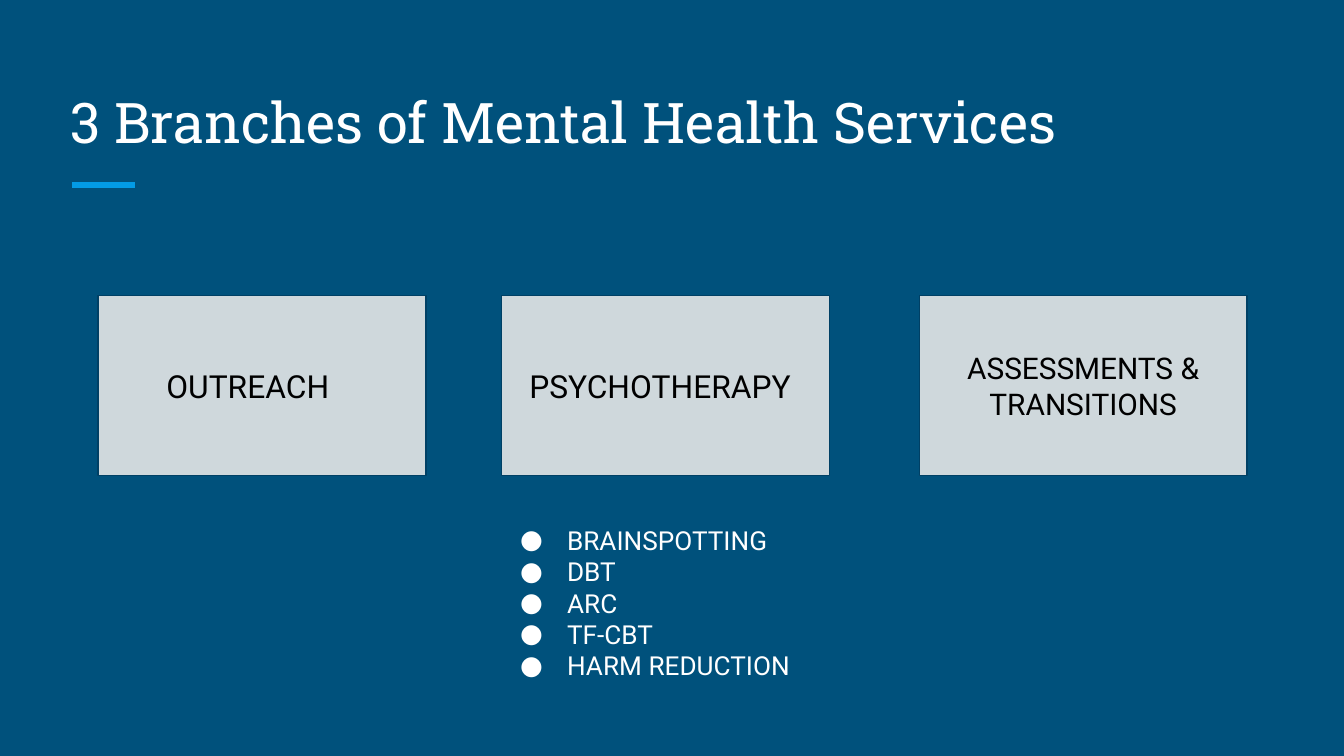
from dataclasses import dataclass

from lxml.etree import SubElement
from pptx import Presentation
from pptx.dml.color import RGBColor
from pptx.enum.shapes import MSO_CONNECTOR as Link, MSO_SHAPE as Kind
from pptx.enum.text import MSO_ANCHOR as Anchor, MSO_AUTO_SIZE as Fit, PP_ALIGN as Align
from pptx.oxml.ns import qn
from pptx.util import Pt

WHITE, BLACK = "FFFFFF", "000000"
NAVY, EDGE, GREY, SKY = "00517C", "004065", "CFD8DC", "039BE5"
SANS, SLAB = "Roboto", "Roboto Slab"
TOP, WIDE, HIGH = 158.4, 175.7, 96.5


@dataclass
class Branch:
    name: str
    left: float
    label: tuple[float, float, float, float]
    size: float
    align: Align = Align.LEFT


BRANCHES = [
    Branch("OUTREACH", 52.5, (82, 189.4, 116.6, 35.3), 17),
    Branch("PSYCHOTHERAPY", 268.8, (276.5, 189.4, 167.8, 35.3), 17),
    Branch("ASSESSMENTS & TRANSITIONS", 492.5, (509, 180, 142.6, 53.3), 16, Align.CENTER),
]
METHODS = ["BRAINSPOTTING", "DBT", "ARC", "TF-CBT", "HARM REDUCTION"]


def paint(target, tone: str) -> None:
    """Give a fill a solid colour."""
    target.solid()
    target.fore_color.rgb = RGBColor.from_string(tone)


def place(shape, left: float, top: float, width: float, height: float) -> None:
    shape.left, shape.top = Pt(left), Pt(top)
    shape.width, shape.height = Pt(width), Pt(height)


def setup(frame, anchor: Anchor = Anchor.TOP) -> None:
    """Set wrapping, anchor and even insets of a text frame."""
    frame.word_wrap = True
    frame.auto_size = Fit.NONE
    frame.vertical_anchor = anchor
    frame.margin_left = frame.margin_right = Pt(7.2)
    frame.margin_top = frame.margin_bottom = Pt(7.2)


def write(para, text: str, size: float, tone: str, face: str = SANS,
          align: Align = Align.LEFT) -> None:
    para.alignment = align
    para.line_spacing = 1.0
    para.space_before = Pt(0)
    run = para.add_run()
    run.text = text
    run.font.size = Pt(size)
    run.font.name = face
    paint(run.font.fill, tone)


def bullet(para, tone: str) -> None:
    props = para._p.get_or_add_pPr()
    props.set("marL", str(Pt(36)))
    props.set("indent", str(-Pt(25.2)))
    SubElement(SubElement(props, qn("a:buClr")), qn("a:srgbClr"), val=tone)
    SubElement(props, qn("a:buFont"), typeface=SANS)
    SubElement(props, qn("a:buChar"), char="●")


def draw(slide, branch: Branch) -> None:
    card = slide.shapes.add_shape(Kind.RECTANGLE, Pt(branch.left), Pt(TOP), Pt(WIDE), Pt(HIGH))
    card.shadow.inherit = False
    paint(card.fill, GREY)
    paint(card.line.fill, EDGE)
    card.line.width = Pt(0.75)
    label = slide.shapes.add_textbox(*map(Pt, branch.label))
    setup(label.text_frame)
    write(label.text_frame.paragraphs[0], branch.name, branch.size, BLACK, align=branch.align)


def main() -> None:
    deck = Presentation()
    deck.slide_width, deck.slide_height = Pt(720), Pt(405)
    slide = deck.slides.add_slide(deck.slide_layouts[1])
    paint(slide.background.fill, NAVY)

    title = slide.shapes.title
    place(title, 30.3, 36, 658.8, 54)
    setup(title.text_frame, Anchor.BOTTOM)
    write(title.text_frame.paragraphs[0], "3 Branches of Mental Health Services", 30, WHITE, SLAB)

    rule = slide.shapes.add_connector(Link.STRAIGHT, Pt(38.6), Pt(99.2), Pt(72.2), Pt(99.2))
    paint(rule.line.fill, SKY)
    rule.line.width = Pt(3)
    SubElement(rule._element.spPr, qn("a:effectLst"))

    for branch in BRANCHES:
        draw(slide, branch)

    body = slide.placeholders[1]
    place(body, 260.6, 273.6, 280.8, 99.4)
    frame = body.text_frame
    setup(frame)
    for i, method in enumerate(METHODS):
        para = frame.add_paragraph() if i else frame.paragraphs[0]
        bullet(para, WHITE)
        write(para, method, 14, WHITE)

    deck.save("out.pptx")


if __name__ == "__main__":
    main()
